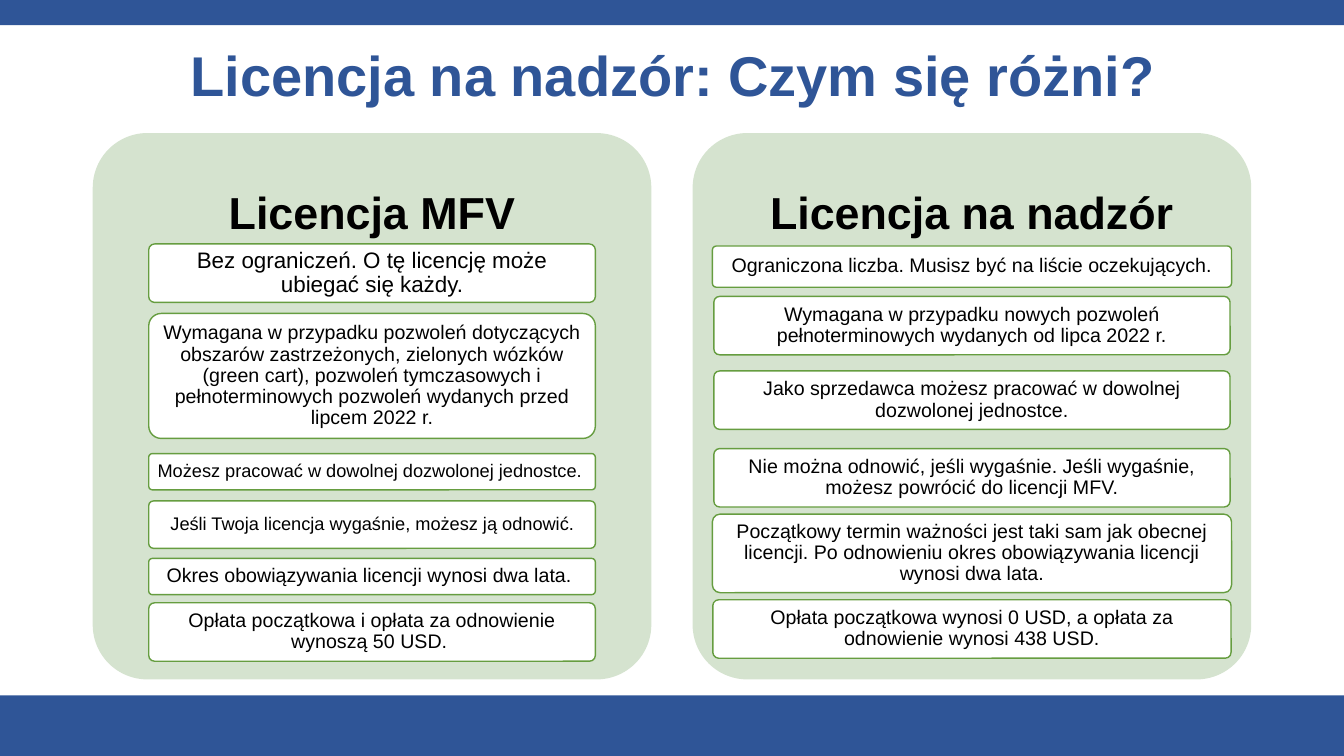
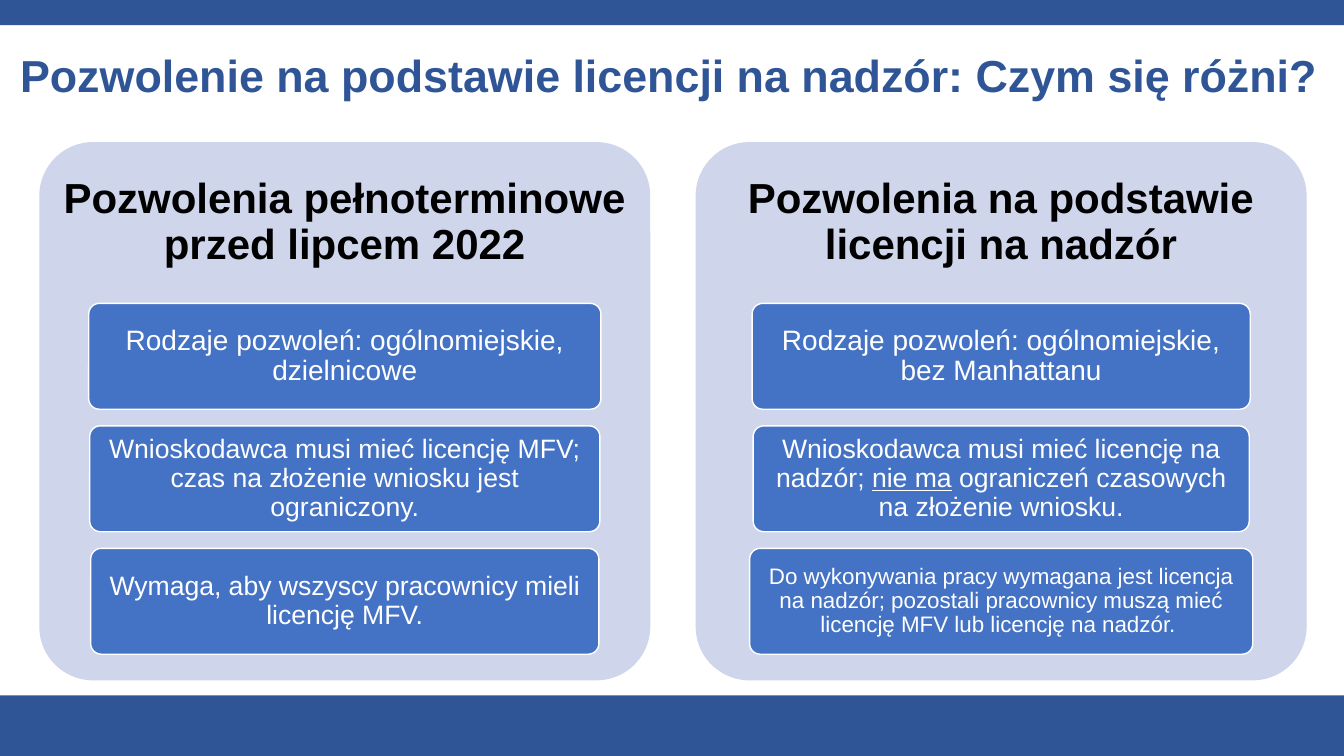
"""Builds two slides comparing vending licences and the permits based on them."""
from dataclasses import dataclass

from pptx import Presentation
from pptx.dml.color import RGBColor
from pptx.enum.shapes import MSO_SHAPE
from pptx.enum.text import MSO_ANCHOR, PP_ALIGN
from pptx.util import Inches, Pt

RECTANGLE = MSO_SHAPE.RECTANGLE
ROUNDED = MSO_SHAPE.ROUNDED_RECTANGLE
MIDDLE = MSO_ANCHOR.MIDDLE
CENTER = PP_ALIGN.CENTER


@dataclass(frozen=True)
class Theme:
    font: str = "Arial"
    band: str = "2F5597"
    black: str = "000000"
    white: str = "FFFFFF"
    green_panel: str = "D5E3CF"
    green_line: str = "669D40"
    blue_panel: str = "CFD5EA"
    blue_card: str = "4472C4"
    title_large: int = 40
    title_small: int = 32
    heading_large: int = 32
    heading_small: int = 30
    card_xl: int = 20
    card_l: int = 19
    card_m: int = 16
    card_s: int = 14
    card_xs: int = 13


theme = Theme()


def add_block(slide, preset, box, fill, line=None):
    block = slide.shapes.add_shape(preset, *map(Inches, box))
    block.shadow.inherit = False
    block.fill.solid()
    block.fill.fore_color.rgb = RGBColor.from_string(fill)
    if line:
        block.line.color.rgb = RGBColor.from_string(line)
        block.line.width = Pt(1)
    else:
        block.line.fill.background()
    if preset == ROUNDED:
        block.adjustments[0] = 0.1
    return block


def write(shape, text, size, color, bold=False, inset=0.05):
    """Centre the text; parts between underscores are underlined."""
    frame = shape.text_frame
    frame.word_wrap = True
    frame.vertical_anchor = MIDDLE
    frame.margin_left = frame.margin_right = Inches(inset)
    frame.margin_top = frame.margin_bottom = Inches(inset)
    paragraph = frame.paragraphs[0]
    paragraph.alignment = CENTER
    paragraph.line_spacing = 0.9
    for index, part in enumerate(text.split("_")):
        run = paragraph.add_run()
        run.text = part
        run.font.name = theme.font
        run.font.size = Pt(size)
        run.font.bold = bold
        run.font.color.rgb = RGBColor.from_string(color)
        if index % 2:
            run.font.underline = True


permit_rows = [(3.01 + 1.215 * row, 1.05) for row in range(3)]

comparisons = [
    {
        "title": "Licencja na nadzór: Czym się różni?",
        "title_size": theme.title_large,
        "title_span": (0.92, 11.5),
        "panel": (1.32, 5.54, 5.42),
        "heading_size": theme.heading_large,
        "colors": (theme.green_panel, theme.white, theme.green_line, theme.black),
        "columns": [
            (0.92, "Licencja MFV", [
                (2.42, 0.58, 4.43, theme.card_m,
                 "Bez ograniczeń. O tę licencję może ubiegać się każdy."),
                (3.11, 1.24, 4.43, theme.card_s,
                 "Wymagana w przypadku pozwoleń dotyczących obszarów zastrzeżonych, "
                 "zielonych wózków (green cart), pozwoleń tymczasowych i "
                 "pełnoterminowych pozwoleń wydanych przed lipcem 2022 r."),
                (4.5, 0.36, 4.43, theme.card_xs,
                 "Możesz pracować w dowolnej dozwolonej jednostce. "),
                (4.97, 0.47, 4.43, theme.card_xs,
                 "Jeśli Twoja licencja wygaśnie, możesz ją odnowić."),
                (5.54, 0.36, 4.43, theme.card_s,
                 "Okres obowiązywania licencji wynosi dwa lata. "),
                (5.98, 0.58, 4.43, theme.card_s,
                 "Opłata początkowa i opłata za odnowienie wynoszą 50 USD. "),
            ]),
            (6.87, "Licencja na nadzór", [
                (2.44, 0.41, 5.15, theme.card_s,
                 "Ograniczona liczba. Musisz być na liście oczekujących."),
                (2.94, 0.58, 5.12, theme.card_s,
                 "Wymagana w przypadku nowych pozwoleń pełnoterminowych "
                 "wydanych od lipca 2022 r."),
                (3.68, 0.58, 5.12, theme.card_s,
                 "Jako sprzedawca możesz pracować w dowolnej dozwolonej jednostce."),
                (4.45, 0.58, 5.12, theme.card_s,
                 "Nie można odnowić, jeśli wygaśnie. Jeśli wygaśnie, "
                 "możesz powrócić do licencji MFV."),
                (5.1, 0.78, 5.15, theme.card_s,
                 "Początkowy termin ważności jest taki sam jak obecnej licencji. "
                 "Po odnowieniu okres obowiązywania licencji wynosi dwa lata."),
                (5.95, 0.58, 5.14, theme.card_s,
                 "Opłata początkowa wynosi 0 USD, a opłata za odnowienie "
                 "wynosi 438 USD."),
            ]),
        ],
    },
    {
        "title": "Pozwolenie na podstawie licencji na nadzór: Czym się różni?",
        "title_size": theme.title_small,
        "title_span": (-0.13, 13.54),
        "panel": (1.41, 6.06, 5.34),
        "heading_size": theme.heading_small,
        "colors": (theme.blue_panel, theme.blue_card, theme.white, theme.white),
        "columns": [
            (0.39, "Pozwolenia pełnoterminowe przed lipcem 2022", [
                (*permit_rows[0], 5.08, theme.card_xl,
                 "Rodzaje pozwoleń: ogólnomiejskie, dzielnicowe"),
                (*permit_rows[1], 5.06, theme.card_l,
                 "Wnioskodawca musi mieć licencję MFV; czas na złożenie wniosku "
                 "jest ograniczony."),
                (*permit_rows[2], 5.04, theme.card_l,
                 "Wymaga, aby wszyscy pracownicy mieli licencję MFV."),
            ]),
            (6.9, "Pozwolenia na podstawie licencji na nadzór", [
                (*permit_rows[0], 4.94, theme.card_xl,
                 "Rodzaje pozwoleń: ogólnomiejskie, bez Manhattanu"),
                (*permit_rows[1], 4.92, theme.card_l,
                 "Wnioskodawca musi mieć licencję na nadzór; _nie ma_ ograniczeń "
                 "czasowych na złożenie wniosku."),
                (*permit_rows[2], 4.99, theme.card_m,
                 "Do wykonywania pracy wymagana jest licencja na nadzór; pozostali "
                 "pracownicy muszą mieć licencję MFV lub licencję na nadzór. "),
            ]),
        ],
    },
]

deck = Presentation()
deck.slide_width = Inches(13.33)
deck.slide_height = Inches(7.5)
blank = deck.slide_layouts[6]

for comparison in comparisons:
    slide = deck.slides.add_slide(blank)
    for band_top, band_height in ((0, 0.25), (6.9, 0.6)):
        add_block(slide, RECTANGLE, (0, band_top, 13.33, band_height), theme.band)

    title_left, title_width = comparison["title_span"]
    title = slide.shapes.add_textbox(
        Inches(title_left), Inches(0.4), Inches(title_width), Inches(0.75))
    write(title, comparison["title"], comparison["title_size"], theme.band, True)

    panel_top, panel_width, panel_height = comparison["panel"]
    panel_fill, card_fill, card_line, card_ink = comparison["colors"]
    for panel_left, heading_text, cards in comparison["columns"]:
        add_block(slide, ROUNDED,
                  (panel_left, panel_top, panel_width, panel_height), panel_fill)
        heading = slide.shapes.add_textbox(
            Inches(panel_left), Inches(panel_top),
            Inches(panel_width), Inches(0.3 * panel_height))
        write(heading, heading_text, comparison["heading_size"], theme.black,
              True, inset=0.12)

        for top, height, width, size, text in cards:
            left = panel_left + (panel_width - width) / 2
            card = add_block(slide, ROUNDED, (left, top, width, height),
                             card_fill, card_line)
            write(card, text, size, card_ink)

deck.save("out.pptx")
